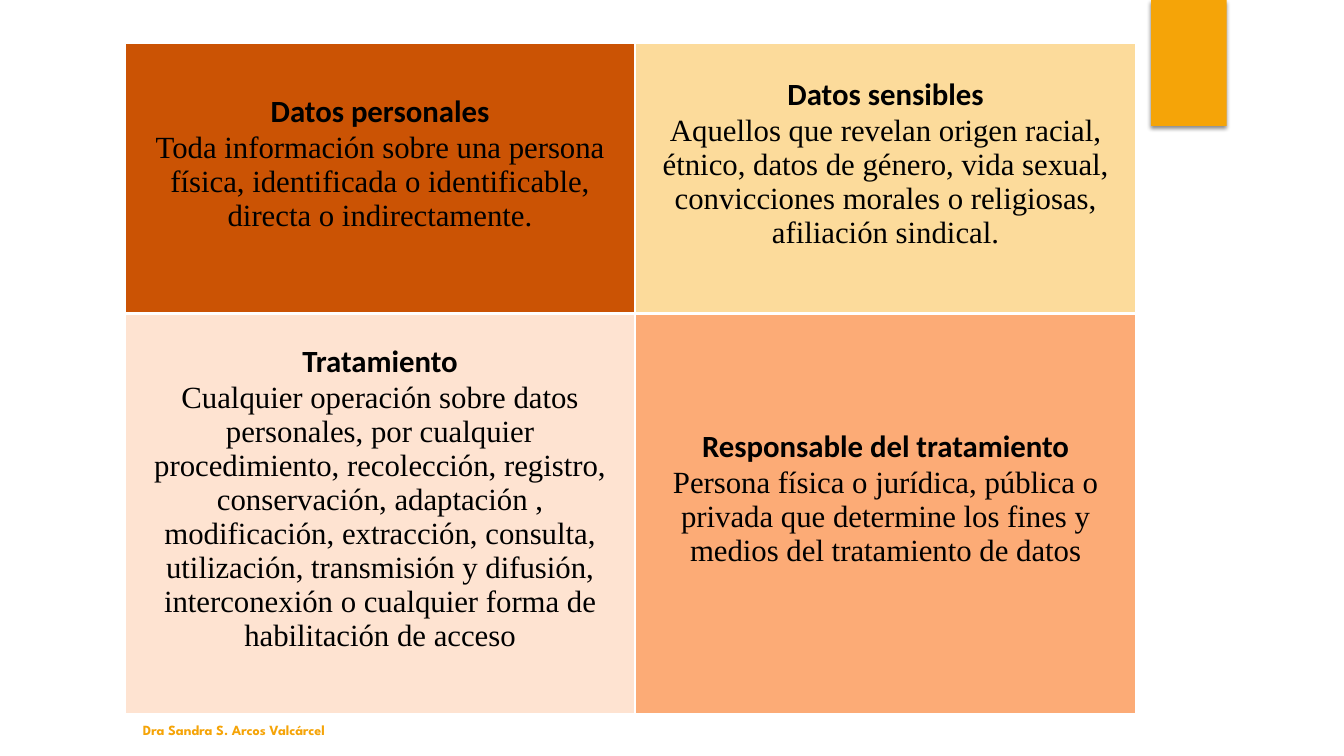
from lxml.etree import SubElement
from pptx import Presentation
from pptx.dml.color import RGBColor
from pptx.enum.shapes import MSO_SHAPE as Preset
from pptx.enum.text import MSO_ANCHOR as Anchor, PP_ALIGN as Align
from pptx.oxml.ns import qn
from pptx.util import Inches, Pt

BLACK = RGBColor(0x00, 0x00, 0x00)
WHITE = RGBColor(0xFF, 0xFF, 0xFF)
AMBER = RGBColor(0xF5, 0xA4, 0x08)
RUST = RGBColor(0xCB, 0x53, 0x04)
SAND = RGBColor(0xFC, 0xDB, 0x9B)
BLUSH = RGBColor(0xFE, 0xE3, 0xD1)
APRICOT = RGBColor(0xFC, 0xAB, 0x76)

COLUMN_SHARES = [37.95, 37.28]
ROW_SHARES = [35.73, 52.93]
DEFINITIONS = [
    [("Datos personales",
      "Toda información sobre una persona física, identificada o identificable, "
      "directa o indirectamente.", RUST),
     ("Datos sensibles",
      "Aquellos que revelan origen racial, étnico, datos de género, vida sexual, "
      "convicciones morales o religiosas, afiliación sindical.", SAND)],
    [("Tratamiento",
      "Cualquier operación sobre datos personales, por cualquier procedimiento, "
      "recolección, registro, conservación, adaptación , modificación, extracción, "
      "consulta, utilización, transmisión y difusión, interconexión o cualquier "
      "forma de habilitación de acceso", BLUSH),
     ("Responsable del tratamiento",
      "Persona física o jurídica, pública o privada que determine los fines y "
      "medios del tratamiento de datos", APRICOT)],
]


class SlideBuilder:
    term = {"name": "Calibri", "size": Pt(22), "bold": True}
    meaning = {"name": "Times New Roman", "size": Pt(22), "bold": False}
    credit = {"name": "League Spartan", "size": Pt(10), "bold": True}

    def __init__(self, deck):
        self.deck = deck
        self.slide = deck.slides.add_slide(deck.slide_layouts[6])

    def across(self, share):
        return round(self.deck.slide_width * share / 100)

    def down(self, share):
        return round(self.deck.slide_height * share / 100)

    def area(self, left, top, width, height):
        return self.across(left), self.down(top), self.across(width), self.down(height)

    def add_span(self, para, text, style, color):
        span = para.add_run()
        span.text = text
        for name, value in style.items():
            setattr(span.font, name, value)
        span.font.color.rgb = color

    def tab(self, place, color):
        shape = self.slide.shapes.add_shape(Preset.RECTANGLE, *self.area(*place))
        shape.fill.solid()
        shape.fill.fore_color.rgb = color
        shape.line.fill.background()
        shape.shadow.inherit = False
        effects = shape.element.spPr.find(qn("a:effectLst"))
        shadow = SubElement(effects, qn("a:outerShdw"), blurRad=str(Pt(3)),
                            dist=str(Pt(2)), dir="5400000", rotWithShape="0")
        tint = SubElement(shadow, qn("a:srgbClr"), val=str(BLACK))
        SubElement(tint, qn("a:alpha"), val="45000")

    def borders(self, cell, widths):
        properties = cell._tc.get_or_add_tcPr()
        for position, (side, width) in enumerate(widths.items()):
            line = SubElement(properties, qn(f"a:ln{side}"), w=str(Pt(width)))
            fill = SubElement(line, qn("a:solidFill"))
            SubElement(fill, qn("a:srgbClr"), val=str(WHITE))
            properties.insert(position, line)

    def cell(self, cell, term, meaning, color):
        cell.fill.solid()
        cell.fill.fore_color.rgb = color
        cell.vertical_anchor = Anchor.MIDDLE
        cell.margin_bottom = Inches(0.35)
        frame = cell.text_frame
        paras = [frame.paragraphs[0], frame.add_paragraph()]
        texts = [(term, self.term), (meaning, self.meaning)]
        for para, (text, style) in zip(paras, texts):
            para.alignment = Align.CENTER
            self.add_span(para, text, style, BLACK)

    def table(self, left, top, columns, rows, content):
        place = self.area(left, top, sum(columns), sum(rows))
        table = self.slide.shapes.add_table(len(rows), len(columns), *place).table
        table.first_row = table.horz_banding = False
        for column, share in zip(table.columns, columns):
            column.width = self.across(share)
        for row, share in zip(table.rows, rows):
            row.height = self.down(share)
        for row_index, entries in enumerate(content):
            top_width, bottom_width = (1, 3) if row_index == 0 else (3, 1)
            for column_index, entry in enumerate(entries):
                cell = table.cell(row_index, column_index)
                self.cell(cell, *entry)
                self.borders(cell, {"L": 1, "R": 1, "T": top_width, "B": bottom_width})

    def label(self, place, text, color):
        box = self.slide.shapes.add_textbox(*self.area(*place))
        frame = box.text_frame
        frame.word_wrap = True
        frame.vertical_anchor = Anchor.MIDDLE
        self.add_span(frame.paragraphs[0], text, self.credit, color)


def main():
    deck = Presentation()
    deck.slide_width, deck.slide_height = Inches(13.33), Inches(7.5)
    page = SlideBuilder(deck)
    page.tab((85.65, 0, 5.63, 16.67), AMBER)
    page.table(9.3, 5.73, COLUMN_SHARES, ROW_SHARES, DEFINITIONS)
    page.label((9.9, 94.4, 31.65, 4.4), "Dra Sandra S. Arcos Valcárcel", AMBER)
    deck.save("out.pptx")


if __name__ == "__main__":
    main()
